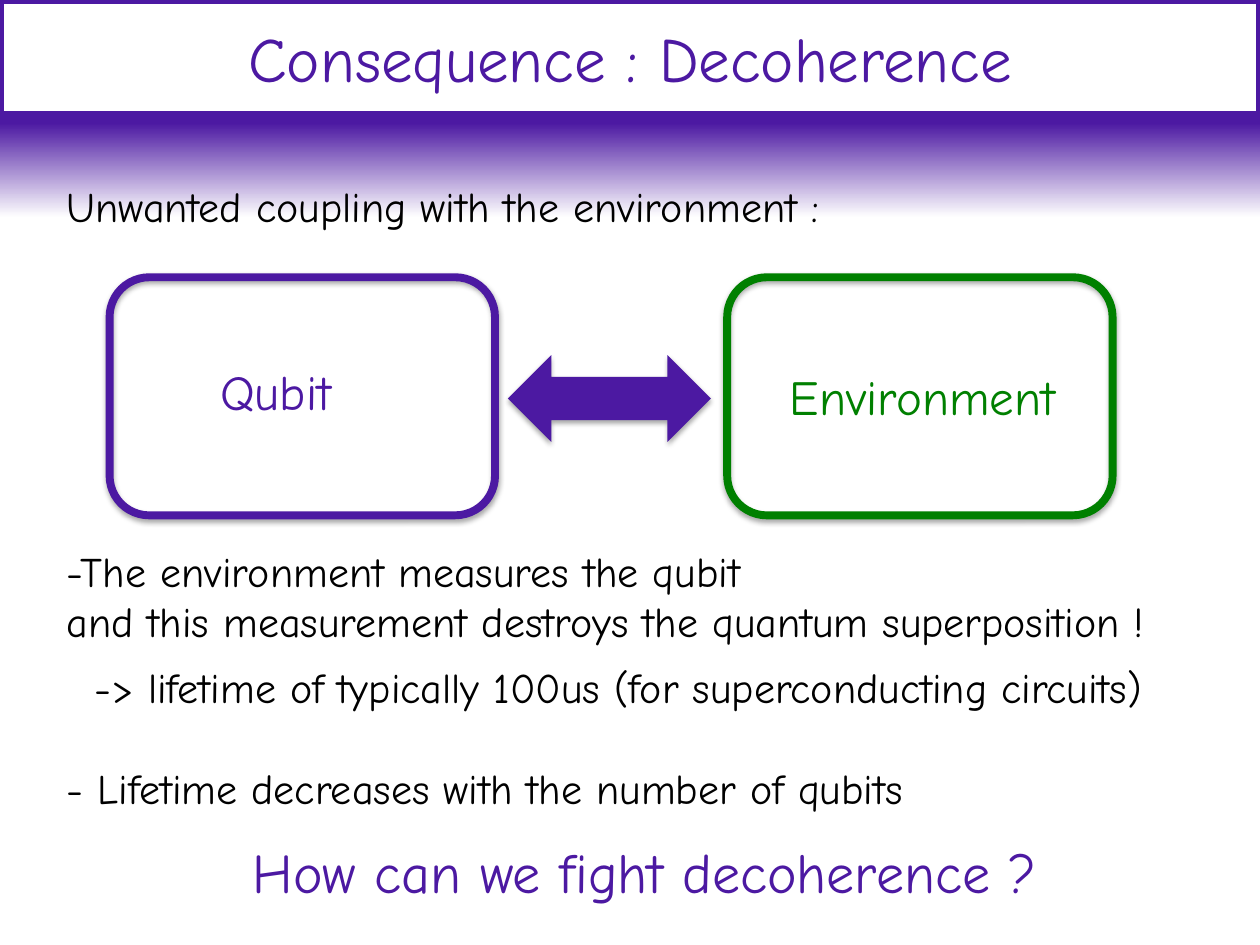
from dataclasses import dataclass
from typing import NamedTuple, Optional

from lxml.etree import SubElement as Sub
from pptx import Presentation
from pptx.dml.color import RGBColor as Rgb
from pptx.enum.shapes import MSO_SHAPE as Kind
from pptx.enum.text import MSO_ANCHOR as Anchor, MSO_AUTO_SIZE as Fit, PP_ALIGN as Align
from pptx.oxml.ns import qn
from pptx.util import Cm, Pt


@dataclass(frozen=True)
class Theme:
    font: str = "Comic Neue"
    violet: str = "4C19A2"
    green: str = "008000"
    black: str = "000000"
    white: str = "FFFFFF"
    title: int = 36
    closing: int = 32
    label: int = 28
    body: int = 24
    border: float = 4.5


class Area(NamedTuple):
    left: float
    top: float
    width: float
    height: float


class Line(NamedTuple):
    text: str
    before: float = 0
    indent: float = 0


class Block(NamedTuple):
    kind: Kind
    area: Area
    fill: Optional[str] = None
    line: Optional[str] = None


class Label(NamedTuple):
    text: str
    area: Area
    size: int
    color: str


THEME = Theme()
BOX_TOP, BOX_W, BOX_H = 5.59, 7.77, 4.8

BLOCKS = [
    Block(Kind.ROUNDED_RECTANGLE, Area(2.21, BOX_TOP, BOX_W, BOX_H), line=THEME.violet),
    Block(Kind.ROUNDED_RECTANGLE, Area(14.66, BOX_TOP, BOX_W, BOX_H), line=THEME.green),
    Block(Kind.LEFT_RIGHT_ARROW, Area(10.24, 7.16, 4.09, 1.75), fill=THEME.violet),
]

LABELS = [
    Label("Qubit", Area(4.19, 7.16, 3, 1.45), THEME.label, THEME.violet),
    Label("Environment", Area(15.67, 7.26, 5.94, 1.45), THEME.label, THEME.green),
    Label("Unwanted coupling with the environment :", Area(1.09, 3.51, 16.81, 1.27),
          THEME.body, THEME.black),
    Label("How can we fight decoherence ?", Area(4.85, 16.76, 17.15, 1.63),
          THEME.closing, THEME.violet),
]

POINTS = [
    Line("-The environment measures the qubit"),
    Line("and this measurement destroys the quantum superposition !"),
    Line("-> lifetime of typically 100us (for superconducting circuits)", 8.6, 0.56),
    Line("- Lifetime decreases with the number of qubits", 28.8),
]


def place(shape, area: Area) -> None:
    shape.left, shape.top, shape.width, shape.height = map(Cm, area)


def paint(shape, fill: Optional[str], line: Optional[str]) -> None:
    if fill:
        shape.fill.solid()
        shape.fill.fore_color.rgb = Rgb.from_string(fill)
    else:
        shape.fill.background()
    if line:
        shape.line.color.rgb = Rgb.from_string(line)
        shape.line.width = Pt(THEME.border)
    else:
        shape.line.fill.background()


def write(shape, lines: list[Line], *, size: int, color: str,
          align: Align = Align.LEFT, anchor: Anchor = Anchor.TOP) -> None:
    frame = shape.text_frame
    frame.word_wrap = True
    frame.auto_size = Fit.NONE
    frame.vertical_anchor = anchor
    for i, line in enumerate(lines):
        para = frame.add_paragraph() if i else frame.paragraphs[0]
        para.alignment = align
        para.space_before = Pt(line.before)
        props = para._p.get_or_add_pPr()
        props.set("marL", str(Cm(line.indent)))
        props.set("indent", "0")
        Sub(props, qn("a:buNone"))
        run = para.add_run()
        run.text = line.text
        run.font.name = THEME.font
        run.font.size = Pt(size)
        run.font.color.rgb = Rgb.from_string(color)


def shade(shape) -> None:
    shape.shadow.inherit = False
    effects = shape._element.spPr.find(qn("a:effectLst"))
    outer = Sub(effects, qn("a:outerShdw"), blurRad=str(Pt(3.1)), dist=str(Pt(1.8)),
                dir="5400000", rotWithShape="0")
    tint = Sub(outer, qn("a:srgbClr"), val=THEME.black)
    Sub(tint, qn("a:alpha"), val="35000")


def draw(slide, block: Block) -> None:
    shape = slide.shapes.add_shape(block.kind, *map(Cm, block.area))
    paint(shape, block.fill, block.line)
    shade(shape)


def tag(slide, label: Label) -> None:
    box = slide.shapes.add_textbox(*map(Cm, label.area))
    write(box, [Line(label.text)], size=label.size, color=label.color)


def fade(slide) -> None:
    fill = slide.background.fill
    fill.gradient()
    fill.gradient_angle = 270
    ends = [(0.13, THEME.violet), (0.23, THEME.white)]
    for stop, (spot, color) in zip(fill.gradient_stops, ends):
        stop.position = spot
        stop.color.rgb = Rgb.from_string(color)


def main() -> None:
    deck = Presentation()
    deck.slide_width, deck.slide_height = Cm(25.4), Cm(19.05)
    slide = deck.slides.add_slide(deck.slide_layouts[1])
    fade(slide)

    title, body = slide.placeholders
    place(title, Area(0, 0, 25.4, 2.31))
    paint(title, THEME.white, THEME.violet)
    write(title, [Line("Consequence : Decoherence")], size=THEME.title,
          color=THEME.violet, align=Align.CENTER, anchor=Anchor.MIDDLE)
    place(body, Area(1.09, 10.87, 23.8, 5.69))
    write(body, POINTS, size=THEME.body, color=THEME.black)

    for block in BLOCKS:
        draw(slide, block)
    for label in LABELS:
        tag(slide, label)
    deck.save("out.pptx")


if __name__ == "__main__":
    main()
